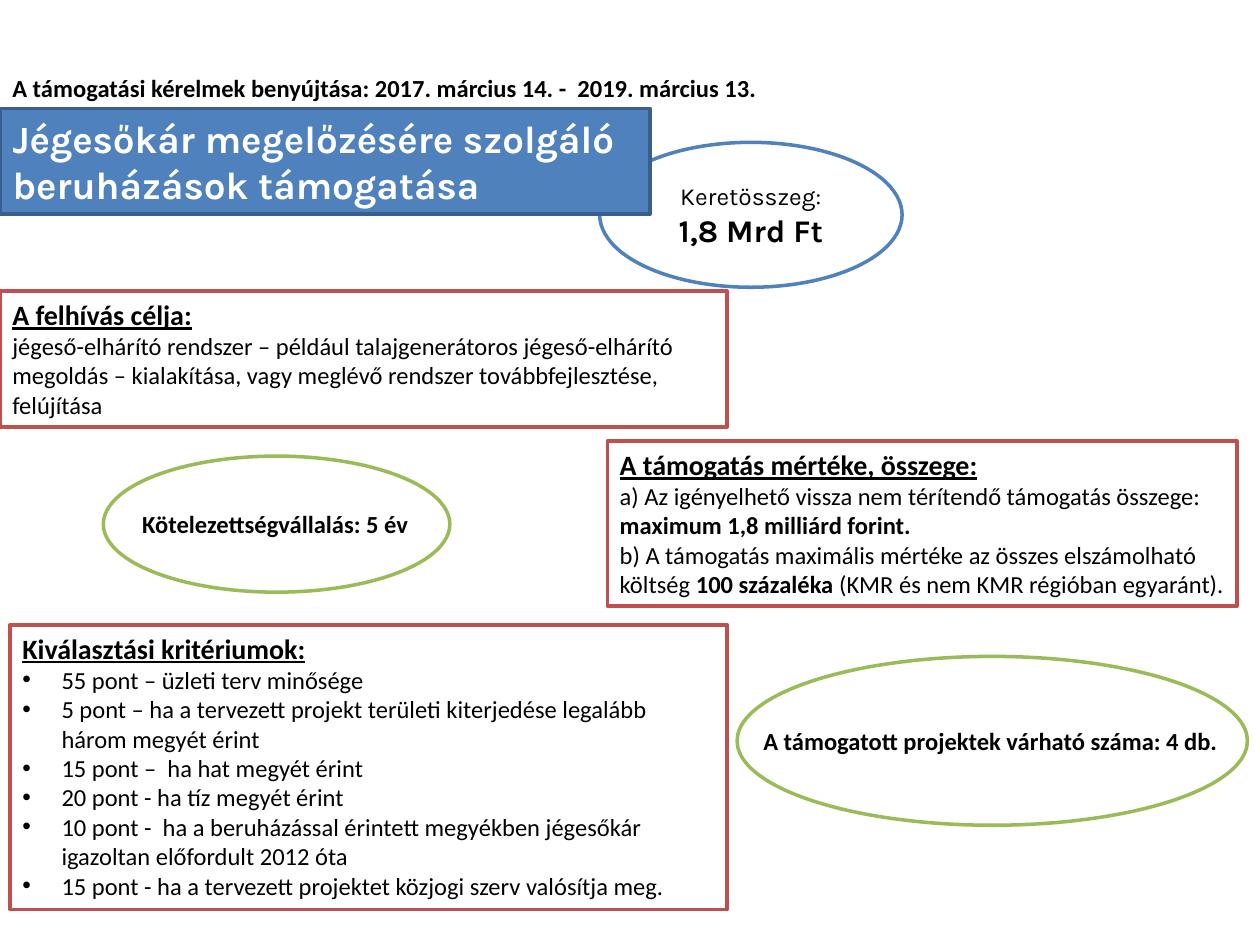
from pptx import Presentation
from pptx.dml.color import RGBColor
from pptx.enum.shapes import MSO_SHAPE as SHAPE
from pptx.enum.text import MSO_ANCHOR as ANCHOR, MSO_AUTO_SIZE as FIT, PP_ALIGN as ALIGN
from pptx.oxml.ns import qn
from pptx.util import Inches, Pt
from lxml.etree import SubElement

COLS, ROWS = 100, 75
WHITE, BLACK, BLUE, NAVY = "FFFFFF", "000000", "4F81BD", "3A5F8C"
RED, GREEN = "C0504D", "9BBB59"
HEADING = dict(size=Pt(16), bold=True, underline=True)
BODY = dict(size=Pt(14), bold=False)
STRONG = dict(size=Pt(14), bold=True)


def rgb(color):
    return RGBColor.from_string(color)


class Page:
    """Current slide with its style; places are in grid columns and rows."""

    def __init__(self, prs):
        self.cell_w = prs.slide_width / COLS
        self.cell_h = prs.slide_height / ROWS
        self.s = prs.slides.add_slide(prs.slide_layouts[5])

    def place(self, col, row, cols, rows):
        return (round(col * self.cell_w), round(row * self.cell_h),
                round(cols * self.cell_w), round(rows * self.cell_h))

    def paint(self, sp, fill, line):
        sp.shadow.inherit = False
        sp.fill.solid()
        sp.fill.fore_color.rgb = rgb(fill)
        sp.line.color.rgb = rgb(line)
        sp.line.width = Pt(2)

    def add_text(self, sp, paragraphs, font="Calibri", color=BLACK, align=ALIGN.LEFT,
                 anchor=ANCHOR.TOP, fit=FIT.SHAPE_TO_FIT_TEXT, wrap=True, bullets=False):
        tf = sp.text_frame
        for name, value in dict(word_wrap=wrap, auto_size=fit, vertical_anchor=anchor).items():
            setattr(tf, name, value)
        for i, runs in enumerate(paragraphs):
            p = tf.paragraphs[0] if i == 0 else tf.add_paragraph()
            p.alignment = align
            if bullets and i:
                self.bullet(p)
            for text, style in runs:
                r = p.add_run()
                r.text = text
                for name, value in dict(style, name=font).items():
                    setattr(r.font, name, value)
                r.font.color.rgb = rgb(color)

    def bullet(self, p):
        pPr = p._p.get_or_add_pPr()
        indent = Inches(0.31)
        pPr.set("marL", str(indent))
        pPr.set("indent", str(-indent))
        SubElement(pPr, qn("a:buFont"), typeface="Arial")
        SubElement(pPr, qn("a:buChar"), char="•")

    def title(self, place, text):
        sp = self.s.shapes.title
        sp.left, sp.top, sp.width, sp.height = self.place(*place)
        self.paint(sp, BLUE, NAVY)
        self.add_text(sp, [[(text, dict(size=Pt(22), bold=True))]], font="Karla",
                      color=WHITE, anchor=ANCHOR.MIDDLE)
        # Bring the title in front of the shapes drawn so far
        sp._element.getparent().append(sp._element)

    def ellipse(self, place, line, paragraphs=()):
        sp = self.s.shapes.add_shape(SHAPE.OVAL, *self.place(*place))
        self.paint(sp, WHITE, line)
        self.add_text(sp, paragraphs, font="Karla", align=ALIGN.CENTER,
                      anchor=ANCHOR.MIDDLE, fit=FIT.NONE)

    def box(self, place, heading, paragraphs, bullets=False):
        sp = self.s.shapes.add_shape(SHAPE.RECTANGLE, *self.place(*place))
        self.paint(sp, WHITE, RED)
        self.add_text(sp, [[(heading, HEADING)], *paragraphs], bullets=bullets)

    def label(self, place, text):
        sp = self.s.shapes.add_textbox(*self.place(*place))
        self.add_text(sp, [[(text, STRONG)]], wrap=False)


def main():
    prs = Presentation()
    prs.slide_width, prs.slide_height = Inches(10), Inches(7.5)
    page = Page(prs)

    # Ellipses and title
    page.ellipse((58.5, 52.1, 40.5, 13.4), GREEN)
    page.ellipse((8.2, 36.2, 27.5, 10.8), GREEN)
    page.ellipse((47.6, 11.3, 24, 11.5), BLUE, [
        [("Keretösszeg:", BODY)],
        [("1,8 Mrd Ft", dict(size=Pt(18), bold=True))],
    ])
    page.title((0, 8.6, 51.6, 8.4), "Jégesőkár megelőzésére szolgáló beruházások támogatása")

    # Purpose and amount of the support
    page.box((0, 23.1, 57.7, 10.8), "A felhívás célja:", [
        [("jégeső-elhárító rendszer – például talajgenerátoros jégeső-elhárító megoldás – "
          "kialakítása, vagy meglévő rendszer továbbfejlesztése, felújítása", BODY)],
    ])
    page.box((48.2, 35, 50, 13.1), "A támogatás mértéke, összege:", [
        [("a) Az igényelhető vissza nem térítendő támogatás összege: ", BODY),
         ("maximum 1,8 milliárd forint.", STRONG)],
        [("b) A támogatás maximális mértéke az összes elszámolható költség ", BODY),
         ("100 százaléka ", STRONG),
         ("(KMR és nem KMR régióban egyaránt).", BODY)],
    ])

    # Selection criteria
    criteria = [
        "55 pont – üzleti terv minősége",
        "5 pont – ha a tervezett projekt területi kiterjedése legalább három megyét érint",
        "15 pont –  ha hat megyét érint",
        "20 pont - ha tíz megyét érint",
        "10 pont -  ha a beruházással érintett megyékben jégesőkár igazoltan előfordult 2012 óta",
        "15 pont - ha a tervezett projektet közjogi szerv valósítja meg.",
    ]
    page.box((0.8, 49.6, 56.9, 22.6), "Kiválasztási kritériumok:",
             [[(text, BODY)] for text in criteria], bullets=True)

    # Single-line labels
    page.label((0, 5.3, 62.7, 3.4),
               "A támogatási kérelmek benyújtása: 2017. március 14. -  2019. március 13.")
    page.label((59.6, 57.1, 38.3, 3.4), "A támogatott projektek várható száma: 4 db.")
    page.label((10.3, 39.9, 23.3, 3.4), "Kötelezettségvállalás: 5 év")

    prs.save("out.pptx")


if __name__ == "__main__":
    main()
